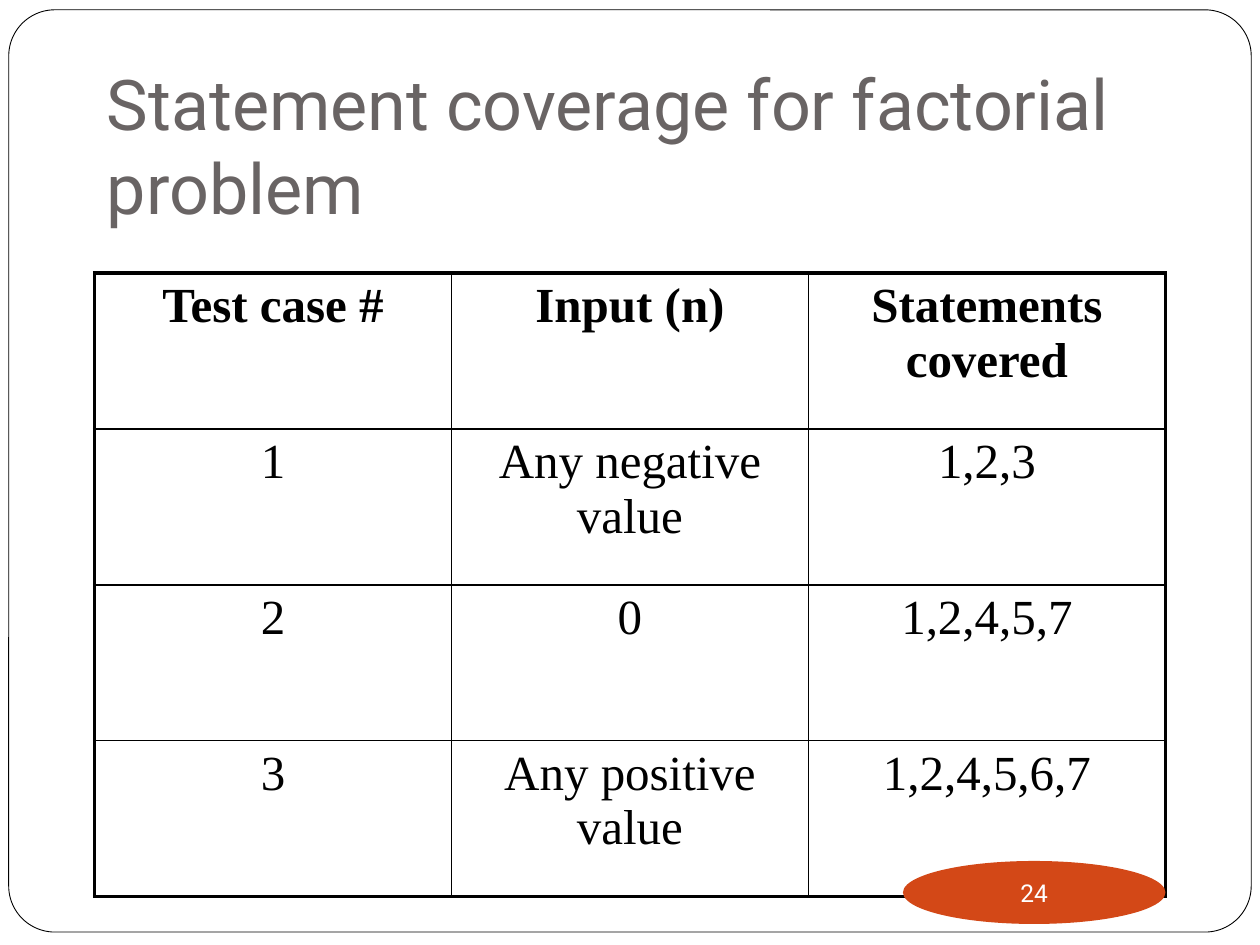
from lxml.etree import SubElement
from pptx import Presentation
from pptx.dml.color import RGBColor
from pptx.enum.shapes import MSO_SHAPE
from pptx.enum.text import MSO_ANCHOR, PP_ALIGN
from pptx.oxml.ns import qn
from pptx.util import Pt

TITLE = "Statement coverage for factorial problem"
ROWS = [
    ("Test case #", "Input (n)", "Statements covered"),
    ("1", "Any negative value", "1,2,3"),
    ("2", "0", "1,2,4,5,7"),
    ("3", "Any positive value", "1,2,4,5,6,7"),
]
PAGE = "24"
COLORS = {"paper": "FFFFFF", "ink": "000000", "title": "696464", "accent": "D34817"}
LEFT, WIDTH = 54, 612
TABLE_TOP, TABLE_HEIGHT = 156, 356.4
THICK, THIN = 2.25, 1


def rgb(name):
    return RGBColor.from_string(COLORS[name])


def style(p, font, size, color, bold=False):
    p.font.name, p.font.size, p.font.bold = font, Pt(size), bold
    p.font.color.rgb = rgb(color)


def set_margins(tf, left, top, right, bottom):
    tf.margin_left, tf.margin_top = Pt(left), Pt(top)
    tf.margin_right, tf.margin_bottom = Pt(right), Pt(bottom)


def add_shape(s, kind, box, fill):
    shape = s.shapes.add_shape(kind, *map(Pt, box))
    shape.shadow.inherit = False
    shape.fill.solid()
    shape.fill.fore_color.rgb = rgb(fill)
    shape.line.fill.background()
    return shape


def set_borders(cell, widths):
    """Draw the left, right, top and bottom borders, in that order."""
    tcPr = cell._tc.get_or_add_tcPr()
    for side, width in zip("LRTB", widths):
        ln = SubElement(tcPr, qn(f"a:ln{side}"), w=str(Pt(width)))
        fill = SubElement(ln, qn("a:solidFill"))
        SubElement(fill, qn("a:srgbClr"), val=COLORS["ink"])


def add_coverage_table(s):
    n_rows, n_cols = len(ROWS), len(ROWS[0])
    table = s.shapes.add_table(n_rows, n_cols, Pt(LEFT), Pt(TABLE_TOP),
                               Pt(WIDTH), Pt(TABLE_HEIGHT)).table
    table.horz_banding = False
    for i, row in enumerate(ROWS):
        for j, text in enumerate(row):
            cell = table.cell(i, j)
            edges = (j == 0, j == n_cols - 1, i == 0, i == n_rows - 1)
            set_borders(cell, [THICK if edge else THIN for edge in edges])
            cell.fill.background()
            set_margins(cell, 6.6, 3.6, 6.6, 3.6)
            p = cell.text_frame.paragraphs[0]
            p.text, p.alignment = text, PP_ALIGN.CENTER
            style(p, "Times New Roman", 28, "ink", bold=i == 0)


prs = Presentation()
prs.slide_width, prs.slide_height = Pt(720), Pt(540)
s = prs.slides.add_slide(prs.slide_layouts[6])

frame = add_shape(s, MSO_SHAPE.ROUNDED_RECTANGLE, (5, 5.6, 710, 527), "paper")
frame.adjustments[0] = 0.05
frame.line.color.rgb = rgb("ink")
frame.line.width = Pt(0.5)

tf = s.shapes.add_textbox(Pt(LEFT), Pt(48), Pt(WIDTH), Pt(90)).text_frame
tf.word_wrap, tf.vertical_anchor = True, MSO_ANCHOR.BOTTOM
set_margins(tf, 7.2, 3.6, 7.2, 7.2)
p = tf.paragraphs[0]
p.text = TITLE
style(p, "Roboto", 40, "title")

add_coverage_table(s)

badge = add_shape(s, MSO_SHAPE.OVAL, (LEFT + WIDTH - 150, 492, 150, 36), "accent")
tf = badge.text_frame
tf.word_wrap, tf.vertical_anchor = False, MSO_ANCHOR.MIDDLE
set_margins(tf, 0, 0, 0, 0)
p = tf.paragraphs[0]
p.text, p.alignment = PAGE, PP_ALIGN.CENTER
style(p, "Roboto", 14, "paper")

prs.save("out.pptx")
